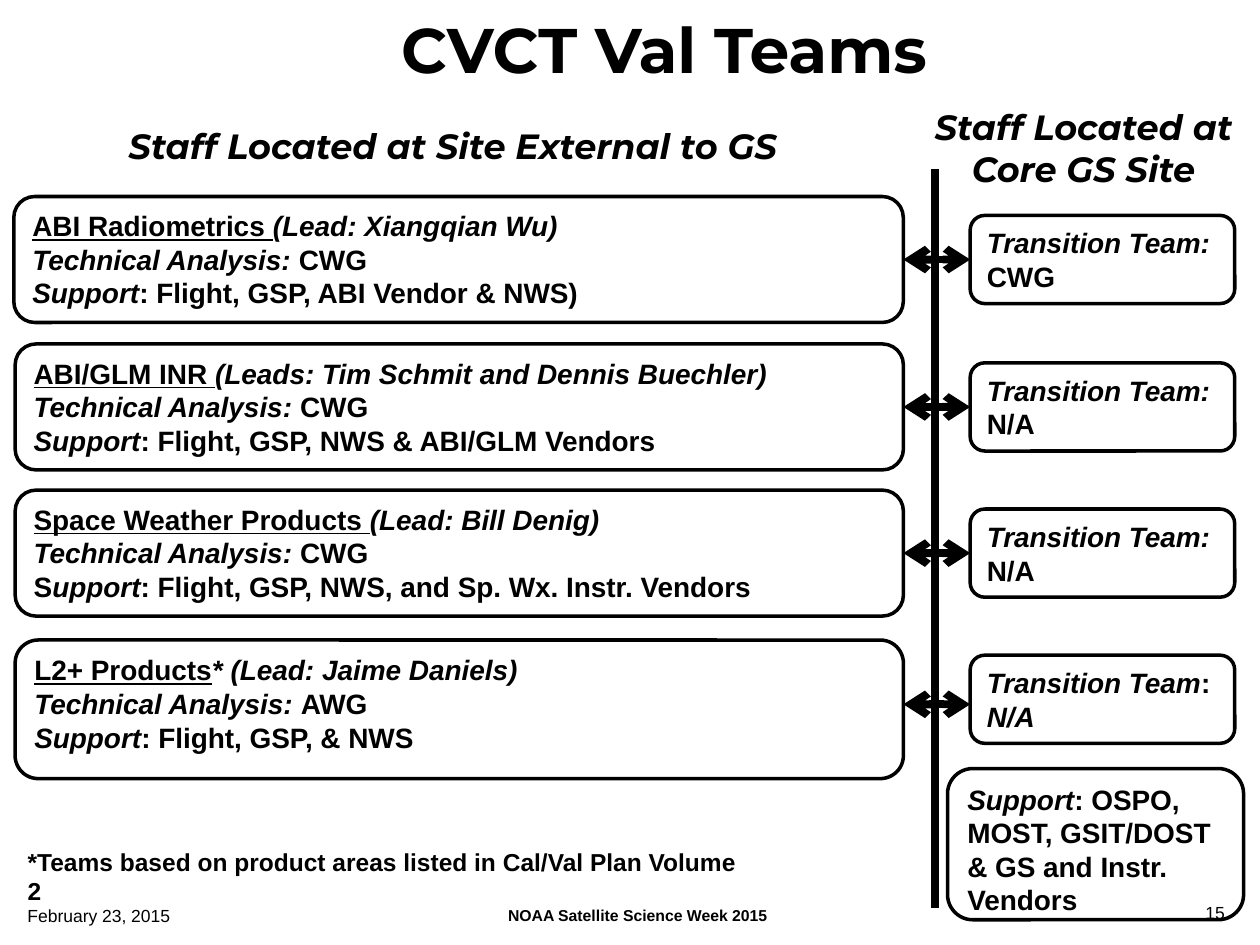
from dataclasses import dataclass

from lxml.etree import SubElement
from pptx import Presentation
from pptx.dml.color import RGBColor
from pptx.enum.shapes import MSO_CONNECTOR, MSO_SHAPE
from pptx.enum.text import MSO_ANCHOR, MSO_AUTO_SIZE, PP_ALIGN
from pptx.oxml.ns import qn
from pptx.util import Inches, Pt


@dataclass(frozen=True)
class Theme:
    ink: RGBColor = RGBColor(0, 0, 0)
    paper: RGBColor = RGBColor(255, 255, 255)
    body_font: str = "Arial"
    heading_font: str = "Montserrat"
    title_size: int = 36
    heading_size: int = 20
    body_size: int = 16
    note_size: int = 14
    small_size: int = 10
    footer_size: int = 9
    outline: float = 2
    rule: float = 4.5


THEME = Theme()
BOTH_SIDES = {"begin": 3, "end": 1}

# Each paragraph is a list of (text, style) spans: "i" italic, "u" underlined.
ANALYSIS_CWG = [("Technical Analysis: ", "i"), ("CWG", "")]
ANALYSIS_AWG = [("Technical Analysis: ", "i"), ("AWG", "")]
# External team box (left, top, width, height), its text, core team top, its text
TEAMS = [
    ((0.11, 1.56, 7.06, 1),
     [[("ABI Radiometrics ", "u"), ("(Lead: Xiangqian Wu)", "i")],
      ANALYSIS_CWG,
      [("Support", "i"), (": Flight, GSP, ABI Vendor & NWS)", "")]],
     1.71, [[("Transition Team: ", "i"), ("CWG", "")]]),
    ((0.12, 2.73, 7.05, 1),
     [[("ABI/GLM INR ", "u"), ("(Leads: Tim Schmit and Dennis Buechler)", "i")],
      ANALYSIS_CWG,
      [("Support", "i"), (": Flight, GSP, NWS & ABI/GLM Vendors", "")]],
     2.88, [[("Transition Team:", "i")], [("N/A", "")]]),
    ((0.12, 3.89, 7.05, 1),
     [[("Space Weather Products ", "u"), ("(Lead: Bill Denig)", "i")],
      ANALYSIS_CWG,
      [("S", ""), ("upport", "i"),
       (": Flight, GSP, NWS, and Sp. Wx. Instr. Vendors", "")]],
     4.04, [[("Transition Team:", "i"), (" N/A", "")]]),
    ((0.12, 5.08, 7.05, 1.1),
     [[("L2+ Products", "u"), ("* (Lead: Jaime Daniels)", "i")],
      ANALYSIS_AWG,
      [("Support", "i"), (": Flight, GSP, & NWS", "")]],
     5.2, [[("Transition Team", "i"), (": ", ""), ("N/A", "i")]]),
]
CORE_SUPPORT = [[("Support", "i"),
                 (": OSPO, MOST, GSIT/DOST & GS and Instr. Vendors", "")]]


def write_text(shape, paragraphs, size=THEME.body_size, font=THEME.body_font,
               bold=True, align=PP_ALIGN.LEFT):
    frame = shape.text_frame
    frame.word_wrap = True
    frame.auto_size = MSO_AUTO_SIZE.NONE
    frame.vertical_anchor = MSO_ANCHOR.TOP
    for index, spans in enumerate(paragraphs):
        para = frame.add_paragraph() if index else frame.paragraphs[0]
        para.alignment = align
        for text, style in spans:
            span = para.add_run()
            span.text = text
            span.font.name = font
            span.font.size = Pt(size)
            span.font.bold = bold
            span.font.italic = "i" in style
            span.font.underline = "u" in style
            span.font.color.rgb = THEME.ink


def add_label(page, position, text, style="", **text_format):
    label = page.shapes.add_textbox(*map(Inches, position))
    write_text(label, [[(text, style)]], **text_format)


def add_team_box(page, position, paragraphs):
    box = page.shapes.add_shape(MSO_SHAPE.ROUNDED_RECTANGLE,
                                *map(Inches, position))
    box.shadow.inherit = False
    box.fill.solid()
    box.fill.fore_color.rgb = THEME.paper
    box.line.color.rgb = THEME.ink
    box.line.width = Pt(THEME.outline)
    write_text(box, paragraphs)
    return box


def add_line(page, start, end, arrows=False):
    line = page.shapes.add_connector(MSO_CONNECTOR.STRAIGHT,
                                     *map(Inches, start + end))
    line.line.color.rgb = THEME.ink
    line.line.width = Pt(THEME.rule)
    if arrows:
        outline = line.line._get_or_add_ln()
        for tag in ("a:headEnd", "a:tailEnd"):
            SubElement(outline, qn(tag), type="arrow")
    SubElement(line._element.spPr, qn("a:effectLst"))
    return line


def add_team_row(page, position, external_text, core_top, core_text):
    """Draw an external team, its core team and the double arrow between them."""
    external = add_team_box(page, position, external_text)
    core = add_team_box(page, (7.7, core_top, 2.1, 0.7), core_text)
    left, top, width, height = position
    external_middle, core_middle = top + height / 2, core_top + 0.35
    middle = (external_middle + core_middle) / 2
    arrow = add_line(page, (left + width, middle), (7.7, middle), arrows=True)
    if abs(external_middle - core_middle) < 0.01:
        arrow.begin_connect(external, BOTH_SIDES["begin"])
        arrow.end_connect(core, BOTH_SIDES["end"])


def add_title(page, text):
    title = page.shapes.title
    title.left, title.top = Inches(1.02), Inches(0.03)
    title.width, title.height = Inches(8.5), Inches(0.95)
    write_text(title, [[(text, "")]], size=THEME.title_size,
               font=THEME.heading_font, align=PP_ALIGN.CENTER)


def main():
    deck = Presentation()
    deck.slide_width, deck.slide_height = Inches(10), Inches(7.5)
    page = deck.slides.add_slide(deck.slide_layouts[5])

    add_title(page, "CVCT Val Teams")
    heading = {"style": "i", "size": THEME.heading_size,
               "font": THEME.heading_font, "align": PP_ALIGN.CENTER}
    add_label(page, (0.13, 0.94, 7.01, 0.4),
              "Staff Located at Site External to GS ", **heading)
    add_label(page, (7.21, 0.79, 2.78, 0.7),
              "Staff Located at Core GS Site", **heading)

    add_line(page, (7.42, 1.34), (7.42, 7.21))
    for team in TEAMS:
        add_team_row(page, *team)
    add_team_box(page, (7.52, 6.1, 2.35, 1.2), CORE_SUPPORT)

    add_label(page, (0.12, 6.67, 5.98, 0.34),
              "*Teams based on product areas listed in Cal/Val Plan Volume 2",
              size=THEME.note_size)
    add_label(page, (0.12, 7.13, 3.17, 0.33), "February 23, 2015",
              size=THEME.small_size, bold=False)
    add_label(page, (2.25, 7.14, 5.62, 0.25), "NOAA Satellite Science Week 2015",
              size=THEME.footer_size, align=PP_ALIGN.CENTER)
    add_label(page, (7.49, 7.11, 2.33, 0.39), "15",
              size=THEME.small_size, bold=False, align=PP_ALIGN.RIGHT)

    deck.save("out.pptx")


if __name__ == "__main__":
    main()
